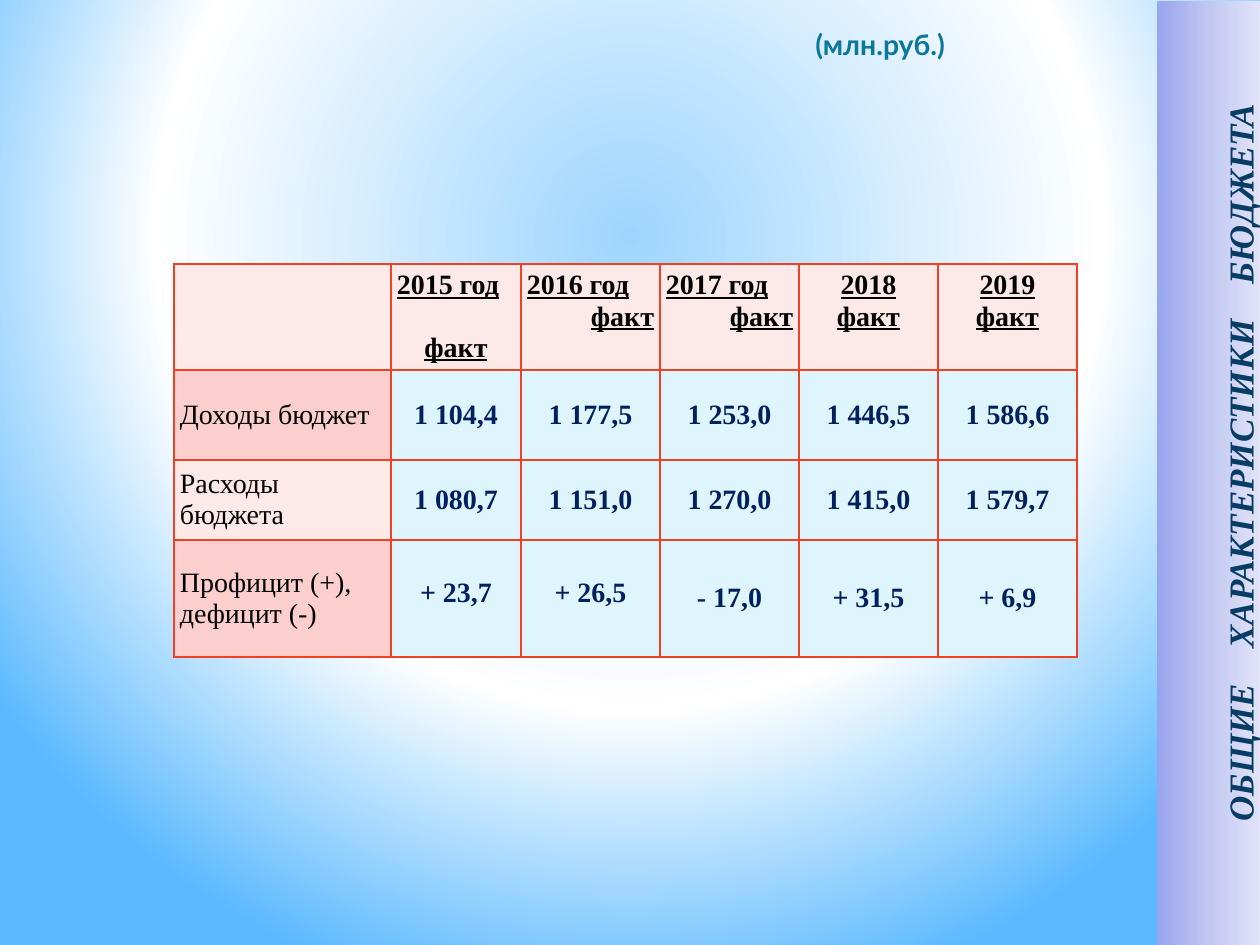
from dataclasses import dataclass

from lxml import etree
from pptx import Presentation
from pptx import util as u
from pptx.dml.color import RGBColor
from pptx.enum import shapes, text
from pptx.oxml.ns import qn

EMU_PER_PX = 914400 / 126
SERIF = "Times New Roman"
BLACK = RGBColor(0, 0, 0)
TEAL = RGBColor(0x0C, 0x77, 0x9D)
NAVY = RGBColor(0x00, 0x20, 0x60)
BANNER_INK = RGBColor(0x07, 0x3C, 0x65)
BORDER = RGBColor(0xF1, 0x41, 0x24)
PALE_ROSE = RGBColor(0xFC, 0xE9, 0xE8)
ROSE = RGBColor(0xFA, 0xCF, 0xCD)
ICE = RGBColor(0xDF, 0xF5, 0xFD)
SKY = RGBColor(0x9E, 0xD5, 0xFF)
WHITE = RGBColor(0xFF, 0xFF, 0xFF)
BLUE = RGBColor(0x5B, 0xB9, 0xFF)
LILAC = RGBColor(0x98, 0xA4, 0xED)
LIGHT_LILAC = RGBColor(0xC1, 0xC7, 0xF2)
PALE_LILAC = RGBColor(0xE1, 0xE3, 0xF8)
LEFT, CENTER, RIGHT = text.PP_ALIGN.LEFT, text.PP_ALIGN.CENTER, text.PP_ALIGN.RIGHT


@dataclass
class Header:
    year: str
    year_align: text.PP_ALIGN = CENTER
    fact_align: text.PP_ALIGN = CENTER
    gap: int = 0


@dataclass
class BudgetRow:
    label: str
    fill: RGBColor
    values: list[str]
    raised: int = 0


HEADERS = [
    Header("2015 год", LEFT, CENTER, 31),
    Header("2016 год", LEFT, RIGHT),
    Header("2017 год", LEFT, RIGHT),
    Header("2018"),
    Header("2019"),
]
ROWS = [
    BudgetRow("Доходы бюджет", ROSE, ["1 104,4", "1 177,5", "1 253,0", "1 446,5", "1 586,6"]),
    BudgetRow("Расходы бюджета", PALE_ROSE, ["1 080,7", "1 151,0", "1 270,0", "1 415,0", "1 579,7"]),
    BudgetRow("Профицит (+), дефицит (-)", ROSE, ["+ 23,7", "+ 26,5", "- 17,0", "+ 31,5", "+ 6,9"], 2),
]
COLUMN_WIDTHS = [217, 130, 139, 139, 139, 139]
ROW_HEIGHTS = [106, 90, 80, 117]


def px(length: int) -> u.Emu:
    return u.Emu(round(length * EMU_PER_PX))


def set_stops(gradient, stops: list[tuple[int, RGBColor]]) -> None:
    stop_list = gradient.find(qn("a:gsLst"))
    for stop in list(stop_list):
        stop_list.remove(stop)
    for percent, color in stops:
        stop = etree.SubElement(stop_list, qn("a:gs"), pos=str(percent * 1000))
        etree.SubElement(stop, qn("a:srgbClr"), val=str(color))


def paint_background(page) -> None:
    page.background.fill.gradient()
    gradient = page.element.find(".//" + qn("a:gradFill"))
    set_stops(gradient, [(0, SKY), (60, WHITE), (100, BLUE)])
    gradient.remove(gradient.find(qn("a:lin")))
    circle = etree.SubElement(gradient, qn("a:path"), path="circle")
    etree.SubElement(circle, qn("a:fillToRect"), l="20000", t="10000", r="20000", b="60000")


def format_title(title) -> None:
    title.left, title.top, title.width, title.height = px(650), px(20), px(295), px(48)
    frame = title.text_frame
    frame.text = "(млн.руб.)"
    frame.auto_size = text.MSO_AUTO_SIZE.NONE
    frame.vertical_anchor = text.MSO_ANCHOR.MIDDLE
    frame.margin_left = frame.margin_right = frame.margin_top = frame.margin_bottom = 0
    para = frame.paragraphs[0]
    para.alignment = RIGHT
    font = para.runs[0].font
    font.name, font.size, font.bold = "Lato", u.Pt(16.2), True
    font.color.rgb = TEAL


def prepare_cell(cell, fill: RGBColor) -> None:
    properties = cell._tc.get_or_add_tcPr()
    for side in ("lnL", "lnR", "lnT", "lnB"):
        line = etree.SubElement(properties, qn(f"a:{side}"), w=str(u.Pt(1)))
        solid = etree.SubElement(line, qn("a:solidFill"))
        etree.SubElement(solid, qn("a:srgbClr"), val=str(BORDER))
    cell.fill.solid()
    cell.fill.fore_color.rgb = fill
    cell.margin_left = cell.margin_right = cell.margin_top = cell.margin_bottom = px(6)


def write_cell(cell, words: str, fill: RGBColor, color: RGBColor, align: text.PP_ALIGN,
               bold: bool, underline: bool = False) -> None:
    prepare_cell(cell, fill)
    cell.text_frame.text = words
    for para in cell.text_frame.paragraphs:
        para.alignment = align
        for span in para.runs:
            font = span.font
            font.name, font.size = SERIF, u.Pt(16)
            font.bold, font.underline = bold, underline
            font.color.rgb = color


def add_budget_table(page) -> None:
    table = page.shapes.add_table(
        len(ROW_HEIGHTS), len(COLUMN_WIDTHS), px(174), px(264),
        px(sum(COLUMN_WIDTHS)), px(sum(ROW_HEIGHTS))).table
    for column, width in zip(table.columns, COLUMN_WIDTHS):
        column.width = px(width)
    for row, height in zip(table.rows, ROW_HEIGHTS):
        row.height = px(height)
    prepare_cell(table.cell(0, 0), PALE_ROSE)
    for column, header in enumerate(HEADERS, 1):
        cell = table.cell(0, column)
        write_cell(cell, f"{header.year}\nфакт", PALE_ROSE, BLACK, CENTER, True, True)
        year, fact = cell.text_frame.paragraphs
        year.alignment, fact.alignment = header.year_align, header.fact_align
        fact.space_before = px(header.gap)
    for row, budget in enumerate(ROWS, 1):
        label = table.cell(row, 0)
        write_cell(label, budget.label, budget.fill, BLACK, LEFT, False)
        label.vertical_anchor = text.MSO_ANCHOR.MIDDLE
        for column, value in enumerate(budget.values, 1):
            cell = table.cell(row, column)
            write_cell(cell, value, ICE, NAVY, CENTER, True)
            cell.vertical_anchor = text.MSO_ANCHOR.MIDDLE
            if column <= budget.raised:
                cell.margin_bottom = px(16)


def add_banner(page) -> None:
    banner = page.shapes.add_shape(shapes.MSO_SHAPE.RECTANGLE, px(736), px(421), px(945), px(104))
    banner.rotation = 270
    banner.shadow.inherit = False
    banner.line.fill.background()
    banner.fill.gradient()
    banner.fill.gradient_angle = 270
    set_stops(banner.element.spPr.find(qn("a:gradFill")),
              [(0, LILAC), (50, LIGHT_LILAC), (100, PALE_LILAC)])
    frame = banner.text_frame
    frame.word_wrap = True
    frame.vertical_anchor = text.MSO_ANCHOR.BOTTOM
    frame.margin_left, frame.margin_right = px(27), px(6)
    frame.margin_top = frame.margin_bottom = 0
    para = frame.paragraphs[0]
    para.alignment = CENTER
    for words in ("ОБЩИЕ", " ", "ХАРАКТЕРИСТИКИ", " ", "БЮДЖЕТА"):
        span = para.add_run()
        span.text = words
        font = span.font
        font.name, font.size, font.bold, font.italic = SERIF, u.Pt(20), True, True
        font.color.rgb = BANNER_INK
        if words == " ":
            span._r.get_or_add_rPr().set("spc", "1500")


def main() -> None:
    deck = Presentation()
    deck.slide_width, deck.slide_height = px(1260), px(945)
    page = deck.slides.add_slide(deck.slide_layouts[5])
    paint_background(page)
    format_title(page.shapes.title)
    add_budget_table(page)
    add_banner(page)
    deck.save("out.pptx")


if __name__ == "__main__":
    main()
